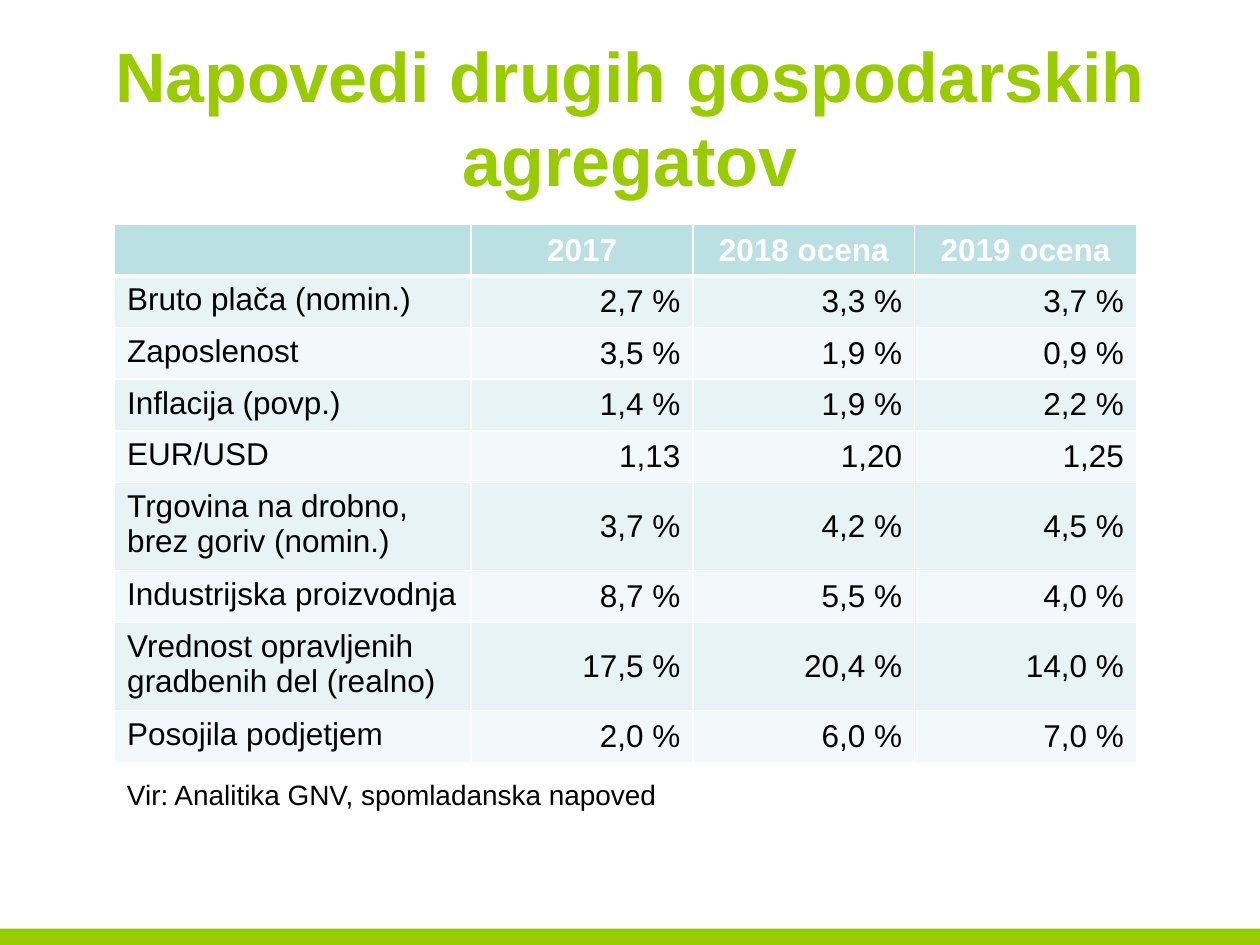
import lxml.etree
import pptx
import pptx.dml.color
import pptx.enum.shapes
import pptx.enum.text
import pptx.oxml.ns
import pptx.util

Inches = pptx.util.Inches
ALIGN = pptx.enum.text.PP_ALIGN
ANCHOR = pptx.enum.text.MSO_ANCHOR
COLORS = {
    "green": "99CC00", "header": "BBE0E3", "odd": "E7F3F4",
    "even": "F3F9FA", "white": "FFFFFF", "black": "000000",
}
ROWS = [
    ["", "2017", "2018 ocena", "2019 ocena"],
    ["Bruto plača (nomin.)", "2,7 %", "3,3 %", "3,7 %"],
    ["Zaposlenost", "3,5 %", "1,9 %", "0,9 %"],
    ["Inflacija (povp.)", "1,4 %", "1,9 %", "2,2 %"],
    ["EUR/USD", "1,13", "1,20", "1,25"],
    ["Trgovina na drobno, brez goriv (nomin.)", "3,7 %", "4,2 %", "4,5 %"],
    ["Industrijska proizvodnja", "8,7 %", "5,5 %", "4,0 %"],
    ["Vrednost opravljenih gradbenih del (realno)", "17,5 %", "20,4 %", "14,0 %"],
    ["Posojila podjetjem", "2,0 %", "6,0 %", "7,0 %"],
]
COLUMN_WIDTHS = [2.83, 1.76, 1.76, 1.76]
ROW_HEIGHT, TALL_ROW_HEIGHT = 0.41, 0.66
TALL_ROWS = (5, 7)
LEFT = 0.91


def write(frame, text, size, color, align, bold=False):
    """Fill a text frame with one formatted paragraph."""
    frame.text = text
    para = frame.paragraphs[0]
    para.alignment = align
    for span in para.runs:
        span.font.name = "Arial"
        span.font.size = pptx.util.Pt(size)
        span.font.bold = bold
        span.font.color.rgb = pptx.dml.color.RGBColor.from_string(COLORS[color])


def add_border(cell, side, points):
    """Draw a white border on side L, R, T or B; call before setting the fill."""
    qn = pptx.oxml.ns.qn
    line = lxml.etree.SubElement(cell._tc.get_or_add_tcPr(), qn(f"a:ln{side}"),
                                 w=str(pptx.util.Pt(points)))
    fill = lxml.etree.SubElement(line, qn("a:solidFill"))
    lxml.etree.SubElement(fill, qn("a:srgbClr"), val=COLORS["white"])


deck = pptx.Presentation()
deck.slide_width, deck.slide_height = Inches(10), Inches(7.5)
page = deck.slides.add_slide(deck.slide_layouts[6])

footer_bar = page.shapes.add_shape(pptx.enum.shapes.MSO_SHAPE.RECTANGLE,
                                   0, Inches(7.37), deck.slide_width, Inches(0.13))
footer_bar.shadow.inherit = False
footer_bar.fill.solid()
footer_bar.fill.fore_color.rgb = pptx.dml.color.RGBColor.from_string(COLORS["green"])
footer_bar.line.fill.background()

title = page.shapes.add_textbox(Inches(0.5), Inches(0.3), Inches(9), Inches(1.25))
title.text_frame.word_wrap = True
title.text_frame.vertical_anchor = ANCHOR.MIDDLE
write(title.text_frame, "Napovedi drugih gospodarskih agregatov", 40, "green",
      ALIGN.CENTER, bold=True)

table = page.shapes.add_table(len(ROWS), len(COLUMN_WIDTHS), Inches(LEFT), Inches(1.78),
                              Inches(sum(COLUMN_WIDTHS)),
                              Inches(ROW_HEIGHT * len(ROWS))).table
table.horz_banding = False
for column, width in zip(table.columns, COLUMN_WIDTHS):
    column.width = Inches(width)

for r, values in enumerate(ROWS):
    table.rows[r].height = Inches(TALL_ROW_HEIGHT if r in TALL_ROWS else ROW_HEIGHT)
    is_header = r == 0
    band = "header" if is_header else "odd" if r % 2 else "even"
    for c, value in enumerate(values):
        cell = table.cell(r, c)
        for side in "LRTB":
            under_header = (r, side) in ((0, "B"), (1, "T"))
            add_border(cell, side, 3 if under_header else 1)
        cell.fill.solid()
        cell.fill.fore_color.rgb = pptx.dml.color.RGBColor.from_string(COLORS[band])
        cell.vertical_anchor = ANCHOR.MIDDLE if c else ANCHOR.TOP
        align = ALIGN.CENTER if is_header else ALIGN.RIGHT if c else ALIGN.LEFT
        write(cell.text_frame, value, 18, "white" if is_header else "black",
              align, bold=is_header)

source = page.shapes.add_textbox(Inches(LEFT), Inches(6.12), Inches(7.2), Inches(0.37))
source.text_frame.word_wrap = True
write(source.text_frame, "Vir: Analitika GNV, spomladanska napoved", 16, "black",
      ALIGN.LEFT)

deck.save("out.pptx")
